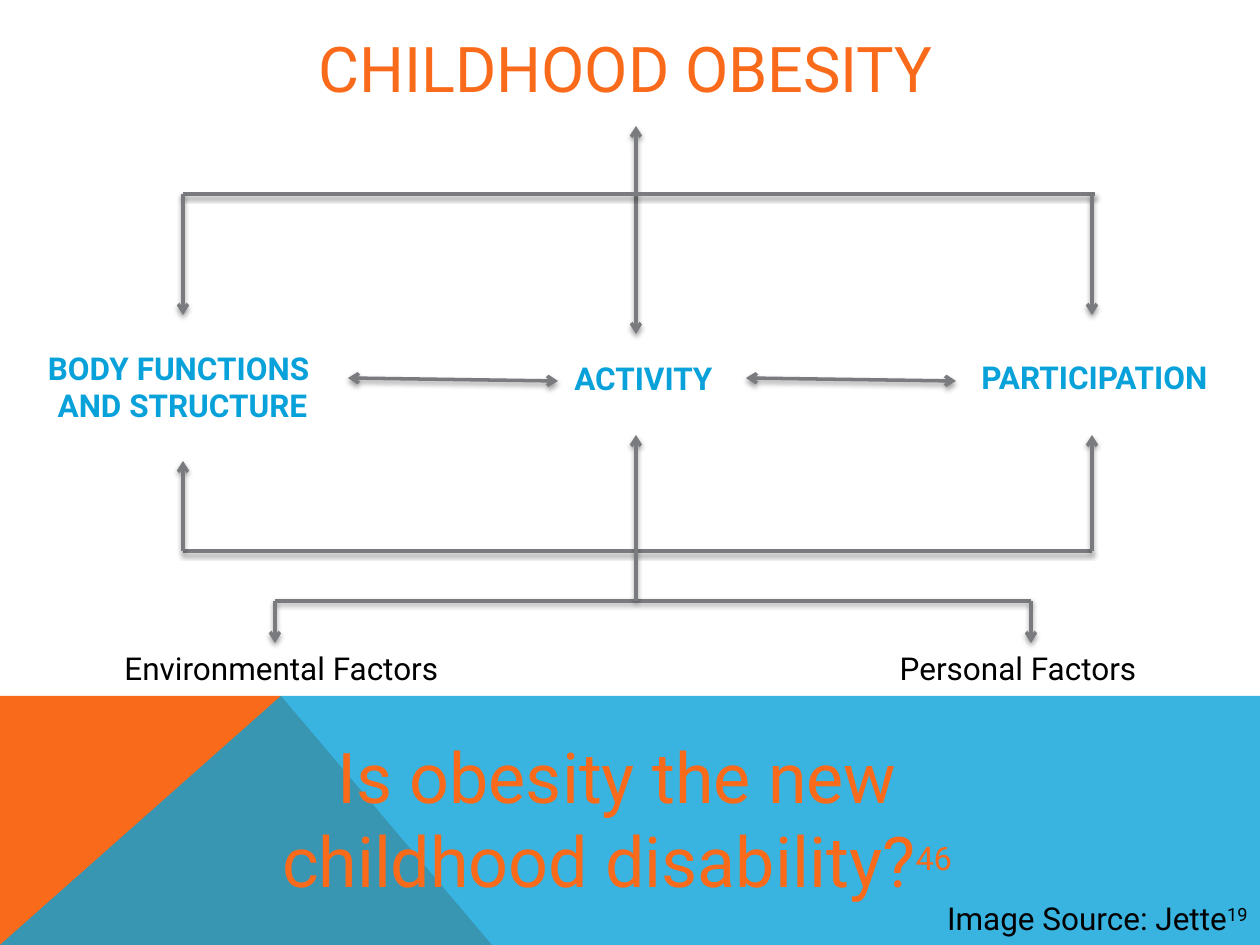
"""Build the childhood obesity slide: a factor diagram above a closing question."""
from lxml.etree import SubElement
from pptx import Presentation
from pptx.dml.color import RGBColor
from pptx.enum.shapes import MSO_CONNECTOR
from pptx.enum.text import MSO_ANCHOR, PP_ALIGN
from pptx.oxml.ns import qn
from pptx.util import Pt

UNIT = 914400 / 126
WIDE, HIGH = 1260, 945
FONT = "Roboto"
ORANGE, BLUE, GRAY, BLACK = "F96A1B", "08A1D9", "797B7E", "000000"
MID, LEFT, RIGHT = 636, 183, 1092
TOP, LOW, BASE = 194, 551, 601
ENV, SELF = 275, 1031

BANDS = [
    ([(0, 945), (0, 696), (281, 696), (492, 945)], ORANGE, 100),
    ([(0, 945), (281, 696), (1260, 696), (1260, 945)], BLUE, 80),
]
LINES = [
    ((MID, 126), (MID, 334), "both"),
    ((558, 381), (348, 378), "both"),
    ((956, 381), (746, 378), "both"),
    ((LEFT, TOP), (1095, TOP), ""),
    ((LEFT, TOP), (LEFT, 315), "end"),
    ((RIGHT, TOP), (RIGHT, 315), "end"),
    ((LEFT, LOW), (RIGHT, LOW), ""),
    ((LEFT, LOW), (LEFT, 461), "end"),
    ((RIGHT, LOW), (RIGHT, 435), "end"),
    ((ENV, BASE), (SELF, BASE), ""),
    ((ENV, BASE), (ENV, 643), "end"),
    ((SELF, BASE), (SELF, 643), "end"),
    ((MID, BASE), (MID, 435), "end"),
]
TEXTS = [
    ((108, 29, 1036, 76), [[("CHILDHOOD OBESITY", 36, 0)]], ORANGE, False, "c"),
    ((447, 353, 393, 50), [[("ACTIVITY", 18, 0)]], BLUE, True, "c"),
    ((-5, 342, 375, 89), [[("BODY FUNCTIONS ", 18, 0)], [("AND STRUCTURE", 18, 0)]],
     BLUE, True, "c"),
    ((898, 352, 393, 50), [[("PARTICIPATION", 18, 0)]], BLUE, True, "c"),
    ((85, 643, 393, 50), [[("Environmental Factors", 18, 0)]], BLACK, False, "c"),
    ((851, 643, 334, 50), [[("Personal Factors", 18, 0)]], BLACK, False, "c"),
    ((251, 726, 732, 183),
     [[("Is obesity the new childhood disability?", 40, 0), ("46", 32, 30)]],
     ORANGE, False, "c"),
    ((809, 893, 451, 50), [[("Image Source: Jette", 18, 0), ("19", 18, 30)]],
     BLACK, False, "r"),
]
ALIGN = {"c": PP_ALIGN.CENTER, "r": PP_ALIGN.RIGHT}
ENDS = {"": [], "end": ["a:tailEnd"], "both": ["a:headEnd", "a:tailEnd"]}


def px(num):
    return round(num * UNIT)


def tint(part, code):
    part.rgb = RGBColor.from_string(code)


def add_band(shapes, dots, code, solid):
    pen = shapes.build_freeform(*dots[0], scale=UNIT)
    pen.add_line_segments(dots[1:], close=True)
    band = pen.convert_to_shape()
    band.shadow.inherit = False
    band.fill.solid()
    tint(band.fill.fore_color, code)
    band.line.fill.background()
    if solid < 100:
        hue = band._element.spPr.find(".//" + qn("a:srgbClr"))
        SubElement(hue, qn("a:alpha"), val=str(solid * 1000))


def add_line(shapes, start, stop, ends):
    line = shapes.add_connector(MSO_CONNECTOR.STRAIGHT, *map(px, start + stop))
    line.line.width = Pt(2)
    tint(line.line.color, GRAY)
    props = line._element.spPr
    for tag in ENDS[ends]:
        SubElement(props.find(qn("a:ln")), qn(tag), type="arrow")
    glow = SubElement(props, qn("a:effectLst"))
    shade = SubElement(glow, qn("a:outerShdw"), blurRad=str(Pt(3.1)),
                       dist=str(Pt(1.6)), dir="5400000", rotWithShape="0")
    hue = SubElement(shade, qn("a:srgbClr"), val=BLACK)
    SubElement(hue, qn("a:alpha"), val="38000")


def add_text(shapes, spot, paras, code, bold, side):
    frame = shapes.add_textbox(*map(px, spot)).text_frame
    frame.word_wrap = True
    frame.vertical_anchor = MSO_ANCHOR.MIDDLE
    for num, runs in enumerate(paras):
        para = frame.add_paragraph() if num else frame.paragraphs[0]
        para.alignment = ALIGN[side]
        for words, size, lift in runs:
            run = para.add_run()
            run.text = words
            run.font.name, run.font.size, run.font.bold = FONT, Pt(size), bold
            tint(run.font.color, code)
            if lift:
                run._r.get_or_add_rPr().set("baseline", str(lift * 1000))


def main():
    deck = Presentation()
    deck.slide_width, deck.slide_height = px(WIDE), px(HIGH)
    shapes = deck.slides.add_slide(deck.slide_layouts[6]).shapes
    for add, items in ((add_band, BANDS), (add_line, LINES), (add_text, TEXTS)):
        for item in items:
            add(shapes, *item)
    deck.save("out.pptx")


if __name__ == "__main__":
    main()
